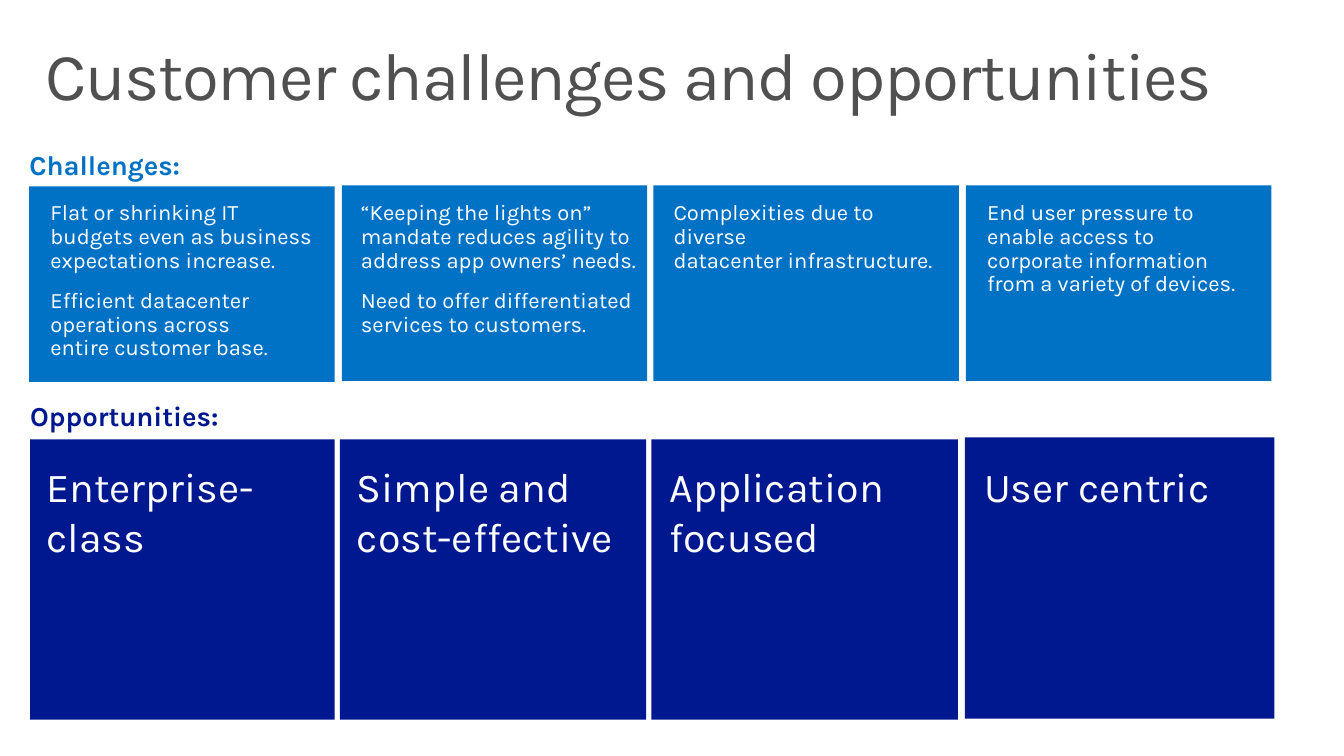
"""Build the customer challenges and opportunities slide."""
from dataclasses import dataclass

from lxml import etree
from pptx import Presentation
from pptx.dml.color import RGBColor
from pptx.enum import shapes, text
from pptx.oxml.ns import qn
from pptx.util import Inches, Pt


@dataclass(frozen=True)
class Theme:
    """Colours, font and type sizes of the slide."""

    font: str = "Karla"
    grey: str = "505050"
    blue: str = "0072C6"
    navy: str = "00188F"
    white: str = "FFFFFF"
    title: float = 48
    heading: float = 19.6
    body: float = 15.7
    large: float = 29.4


THEME = Theme()
BODY_INSETS = (0.2, 0.16)
LARGE_INSETS = (0.16, 0.1)
HEADING_INSETS = (0, 0.05)

CHALLENGES = [
    ((0.29, 1.85), (0.3, 3.01), [
        "Flat or shrinking IT \vbudgets even as business expectations increase.",
        "Efficient datacenter operations across \ventire customer base.",
    ]),
    ((3.39, 1.84), (3.38, 3.26), [
        "“Keeping the lights on” mandate reduces agility to address app owners’ needs.",
        "Need to offer differentiated services to customers.",
    ]),
    ((6.48, 1.84), (6.48, 3.11), [
        "Complexities due to diverse \vdatacenter infrastructure.",
    ]),
    ((9.58, 1.84), (9.59, 3.02), [
        "End user pressure to enable access to corporate information "
        "from a variety of devices.",
    ]),
]
OPPORTUNITIES = [
    ((0.3, 4.36, 3.02, 2.78), 0.3, "Enterprise-class"),
    ((3.37, 4.36, 3.04, 2.78), 3.38, "Simple and \vcost-effective"),
    ((6.46, 4.36, 3.04, 2.78), 6.48, "Application \vfocused"),
    ((9.57, 4.34, 3.07, 2.79), 9.6, "User centric"),
]


def add_panel(page, bounds, color):
    """Add a plain filled rectangle."""
    panel = page.shapes.add_shape(
        shapes.MSO_SHAPE.RECTANGLE, *(Inches(length) for length in bounds))
    panel.shadow.inherit = False
    panel.fill.solid()
    panel.fill.fore_color.rgb = RGBColor.from_string(color)
    panel.line.fill.background()


def format_paragraph(para, size, color, bold, tracking):
    """Style the runs and line breaks of a paragraph."""
    for span in para.runs:
        span.font.name = THEME.font
        span.font.size = Pt(size)
        span.font.bold = bold
        span.font.color.rgb = RGBColor.from_string(color)
        if tracking:
            span.font._element.set("spc", str(tracking * 100))
    for line_break in para._p.findall(qn("a:br")):
        properties = etree.SubElement(line_break, qn("a:rPr"))
        properties.set("sz", str(round(size * 100)))


def add_text(page, bounds, lines, size, color, insets, bold=False,
             anchor=text.MSO_ANCHOR.TOP, line_spacing=None, gap=0, tracking=0):
    """Add a wrapped text box with one paragraph per line."""
    box = page.shapes.add_textbox(*(Inches(length) for length in bounds))
    frame = box.text_frame
    frame.word_wrap = True
    frame.vertical_anchor = anchor
    frame.margin_left = frame.margin_right = Inches(insets[0])
    frame.margin_top = frame.margin_bottom = Inches(insets[1])
    frame.text = "\n".join(lines)
    for para in frame.paragraphs:
        para.line_spacing = line_spacing
        para.space_before = para.space_after = Pt(gap)
        format_paragraph(para, size, color, bold, tracking)


def add_heading(page, bounds, label, color):
    """Add the bold label above a row of panels."""
    add_text(page, bounds, [label], THEME.heading, color, HEADING_INSETS,
             bold=True, anchor=text.MSO_ANCHOR.MIDDLE)


def add_challenge(page, corner, column, lines):
    """Add a challenge panel with its text."""
    left, width = column
    add_panel(page, (*corner, 3.03, 1.94), THEME.blue)
    add_text(page, (left, 1.84, width, 1.91), lines, THEME.body, THEME.white,
             BODY_INSETS, line_spacing=0.9, gap=5.9)


def add_opportunity(page, bounds, left, label):
    """Add an opportunity panel with its label."""
    add_panel(page, bounds, THEME.navy)
    add_text(page, (left, 4.48, 3.04, 1.85), [label], THEME.large, THEME.white,
             LARGE_INSETS)


def main():
    """Build and save the deck."""
    deck = Presentation()
    deck.slide_width, deck.slide_height = Inches(13.33), Inches(7.5)
    page = deck.slides.add_slide(deck.slide_layouts[6])
    add_text(page, (0.29, 0.32, 12.74, 1.96),
             ["Customer challenges and opportunities"], THEME.title, THEME.grey,
             LARGE_INSETS, line_spacing=0.9, tracking=-1)
    for challenge in CHALLENGES:
        add_challenge(page, *challenge)
    add_heading(page, (0.29, 1.27, 3.12, 0.72), "Challenges:", THEME.blue)
    for opportunity in OPPORTUNITIES:
        add_opportunity(page, *opportunity)
    add_heading(page, (0.3, 3.78, 2.67, 0.69), "Opportunities:", THEME.navy)
    deck.save("out.pptx")


if __name__ == "__main__":
    main()
